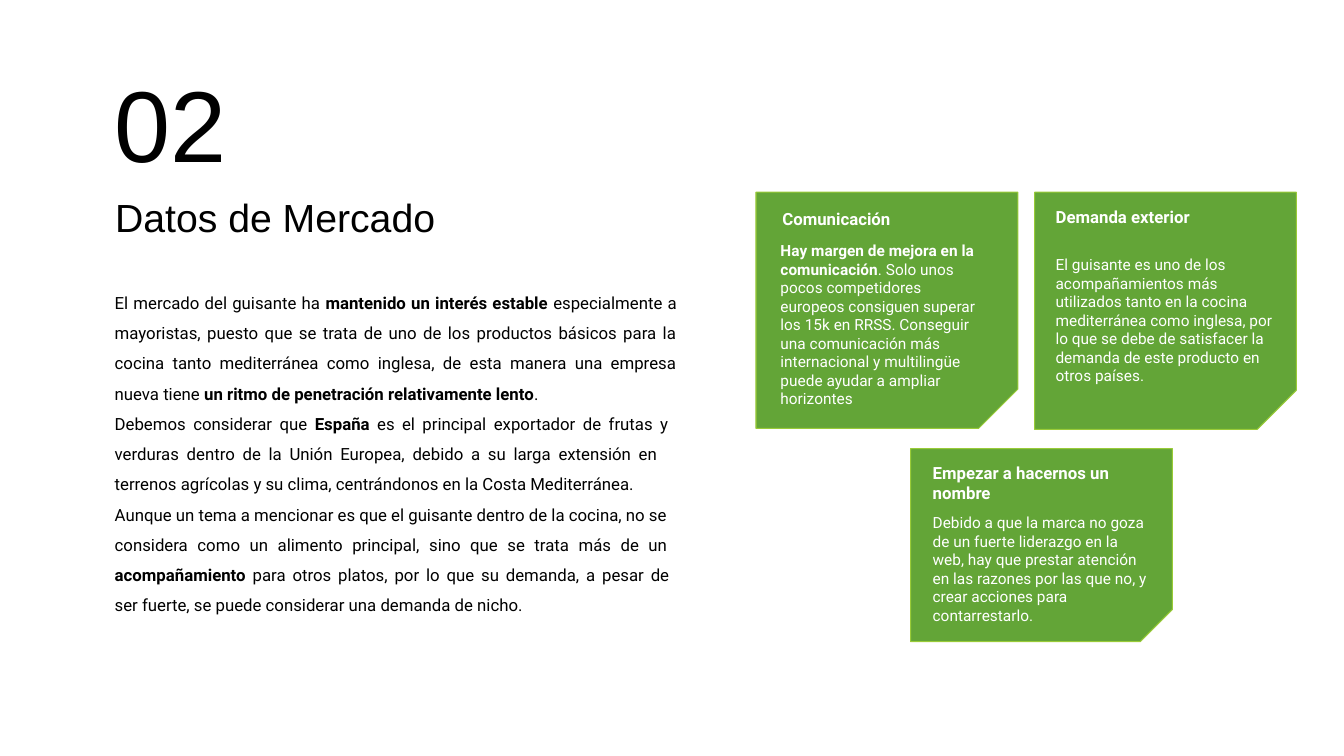
from dataclasses import dataclass
from itertools import accumulate

from pptx import Presentation
from pptx import util as u
from pptx.dml.color import RGBColor
from pptx.enum import text as t

Pt = u.Pt
BLACK = RGBColor(0x00, 0x00, 0x00)
WHITE = RGBColor(0xFF, 0xFF, 0xFF)
GREEN = RGBColor(0x63, 0xA5, 0x37)
LIME = RGBColor(0x99, 0xCB, 0x38)


@dataclass(frozen=True)
class Span:
    """Text with bold parts between ** marks; gap widens each space, in points."""
    words: str
    gap: float = 0


@dataclass(frozen=True)
class Para:
    spans: tuple[Span, ...]
    size: float
    font: str = "Roboto"
    before: float = 0
    lead: float = 1
    indent: float = 0.9
    align: t.PP_ALIGN = t.PP_ALIGN.LEFT


@dataclass(frozen=True)
class Box:
    left: float
    top: float
    width: float
    height: float
    paras: tuple[Para, ...]
    color: RGBColor = WHITE


@dataclass(frozen=True)
class Card:
    left: float
    top: float
    height: float
    cut: float
    width: float = 187


def plain(words: str, size: float, **style) -> Para:
    return Para((Span(words),), size, **style)


def head(words: str, **style) -> Para:
    return plain(f"**{words}**", 12, **style)


CARDS = (
    Card(540, 137.3, 168.7, 28),
    Card(739, 137.3, 169.4, 28),
    Card(650.5, 320.4, 138, 23),
)

JUST = t.PP_ALIGN.JUSTIFY
BOXES = (
    Box(81, 43.2, 117, 88.6, (plain("02", 72, font="Arial"),), BLACK),
    Box(81.4, 137.5, 329, 34.6,
        (plain("Datos de Mercado", 28, font="Arial"),), BLACK),
    Box(81, 200.9, 402.5, 237.6, (
        plain("El mercado del guisante ha **mantenido un interés estable** "
              "especialmente a mayoristas, puesto que se trata de uno de los "
              "productos básicos para la cocina tanto mediterránea como "
              "inglesa, de esta manera una empresa nueva tiene **un ritmo de "
              "penetración relativamente lento**.", 12, lead=1.5, align=JUST),
        Para((Span("Debemos considerar que **España** es el principal "
                   "exportador de frutas y", 2.3),), 12, before=7.2, align=JUST),
        Para((Span("verduras dentro de la Unión Europea, debido a su larga "
                   "extensión en", 2.5),), 12, before=7.2),
        Para((
            Span("terrenos agrícolas y su clima, centrándonos en la Costa "
                 "Mediterránea. Aunque un tema a mencionar es que el guisante "
                 "dentro de la cocina, no se "),
            Span("considera como un alimento principal, sino que se trata más "
                 "de un ", 3.8),
            Span("**acompañamiento** para otros platos, por lo que su demanda, "
                 "a pesar de ", 1.9),
            Span("ser fuerte, se puede considerar una demanda de nicho."),
        ), 12, lead=1.5),
    ), BLACK),
    Box(556.6, 148.3, 149, 144, (
        head("Comunicación", indent=2.2),
        plain("**Hay margen de mejora en la comunicación**. Solo unos pocos "
              "competidores europeos consiguen superar los 15k en RRSS. "
              "Conseguir una comunicación más internacional y multilingüe "
              "puede ayudar a ampliar horizontes", 11, before=8.9),
    )),
    Box(665.3, 329.8, 157.7, 117.4, (
        head("Empezar a hacernos un nombre"),
        plain("Debido a que la marca no goza de un fuerte liderazgo en la web, "
              "hay que prestar atención en las razones por las que no, y crear "
              "acciones para contarrestarlo.", 11, before=7.2),
    )),
    Box(753.1, 146.9, 104, 15.8, (head("Demanda exterior"),)),
    Box(753.1, 181.4, 158, 94.3, (
        plain("El guisante es uno de los acompañamientos más utilizados tanto "
              "en la cocina mediterránea como inglesa, por lo que se debe de "
              "satisfacer la demanda de este producto en otros países.", 11),
    )),
)


def apply(target, values: dict) -> None:
    for name, value in values.items():
        setattr(target, name, value)


def draw_card(slide, card: Card) -> None:
    """Draw a box whose lower right corner is cut off."""
    steps = ((card.left + card.width, card.top), (-card.width, 0),
             (0, card.height), (card.width - card.cut, 0),
             (card.cut, -card.cut))
    spots = [(Pt(x), Pt(y)) for x, y in accumulate(
        steps, lambda a, b: (a[0] + b[0], a[1] + b[1]))]
    path = slide.shapes.build_freeform(*spots[0])
    path.add_line_segments(spots[1:], close=True)
    shape = path.convert_to_shape()
    shape.shadow.inherit = False
    shape.fill.solid()
    shape.fill.fore_color.rgb = GREEN
    shape.line.color.rgb = LIME
    shape.line.width = Pt(0.75)


def add_run(para, words: str, style: dict, color: RGBColor, gap: float) -> None:
    run = para.add_run()
    run.text = words
    apply(run.font, style)
    run.font.color.rgb = color
    if gap:
        run._r.get_or_add_rPr().set("spc", str(round(gap * 100)))


def fill_para(para, spec_para: Para, color: RGBColor) -> None:
    apply(para, {"alignment": spec_para.align,
                 "line_spacing": spec_para.lead,
                 "space_before": Pt(spec_para.before)})
    props = para._p.get_or_add_pPr()
    props.set("marL", str(Pt(spec_para.indent)))
    props.set("indent", "0")
    for span in spec_para.spans:
        for i, part in enumerate(span.words.split("**")):
            style = {"name": spec_para.font, "size": Pt(spec_para.size),
                     "bold": i % 2 == 1}
            if not span.gap:
                if part:
                    add_run(para, part, style, color, 0)
                continue
            for j, word in enumerate(part.split(" ")):
                if j:
                    add_run(para, " ", style, color, span.gap)
                if word:
                    add_run(para, word, style, color, 0)


def draw_box(slide, box: Box) -> None:
    shape = slide.shapes.add_textbox(
        *map(Pt, (box.left, box.top, box.width, box.height)))
    frame = shape.text_frame
    apply(frame, {"word_wrap": True, "margin_left": 0, "margin_right": 0,
                  "margin_top": Pt(0.9), "margin_bottom": 0})
    for i, item in enumerate(box.paras):
        para = frame.add_paragraph() if i else frame.paragraphs[0]
        fill_para(para, item, box.color)


def main() -> None:
    deck = Presentation()
    apply(deck, {"slide_width": Pt(960), "slide_height": Pt(540)})
    slide = deck.slides.add_slide(deck.slide_layouts[6])
    for card in CARDS:
        draw_card(slide, card)
    for box in BOXES:
        draw_box(slide, box)
    deck.save("out.pptx")


if __name__ == "__main__":
    main()
